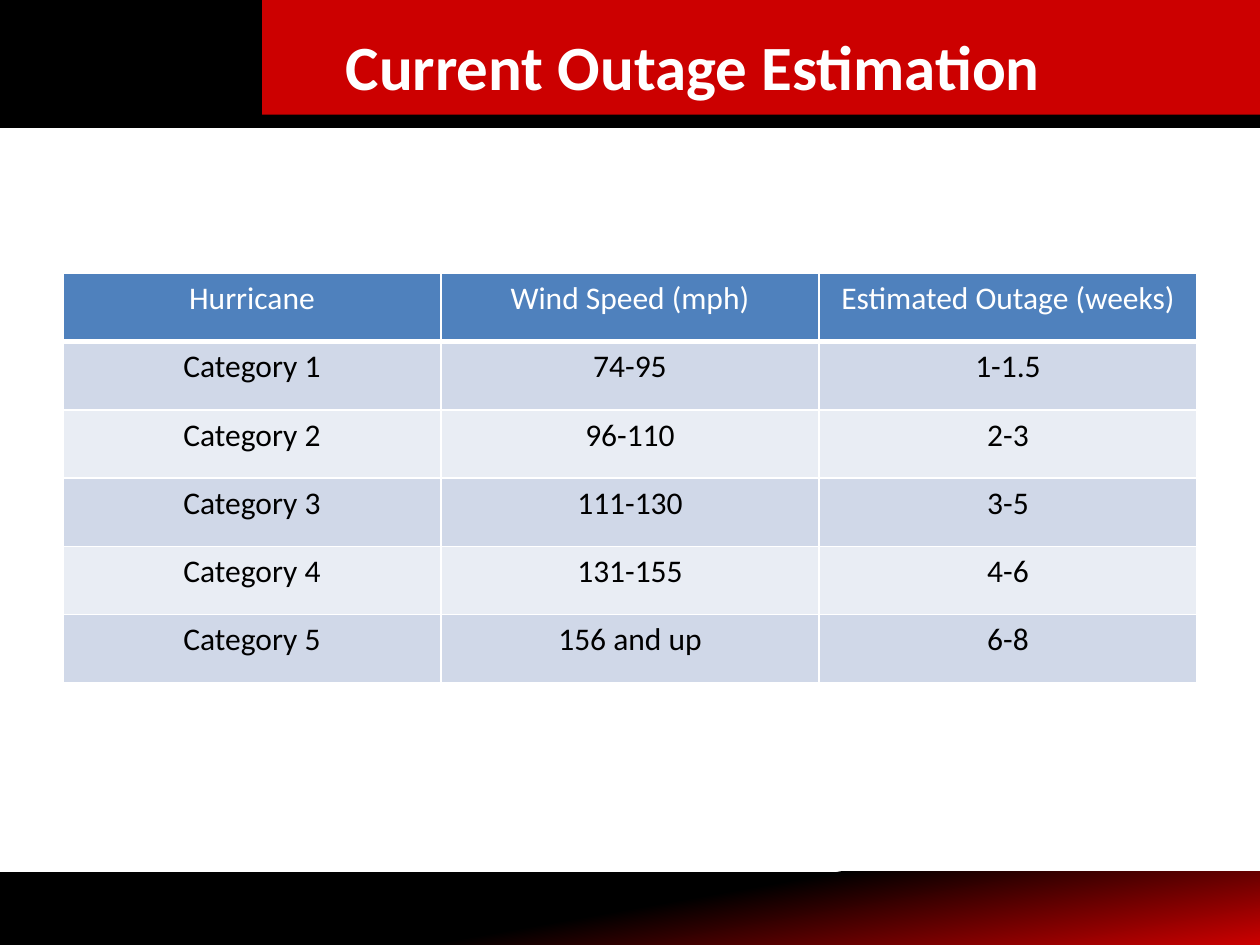
from copy import deepcopy

from lxml import etree
from pptx import Presentation
from pptx.dml.color import RGBColor
from pptx.enum.shapes import MSO_SHAPE as SHAPE
from pptx.enum.text import MSO_ANCHOR as ANCHOR, PP_ALIGN as ALIGN
from pptx.oxml.ns import qn
from pptx.util import Inches, Pt

BLACK, WHITE, RED = "000000", "FFFFFF", "CC0000"
HEADER, BANDS = "4F81BD", ("D0D8E8", "E9EDF4")
OUTAGES = [
    ("Hurricane", "Wind Speed (mph)", "Estimated Outage (weeks)"),
    ("Category 1", "74-95", "1-1.5"),
    ("Category 2", "96-110", "2-3"),
    ("Category 3", "111-130", "3-5"),
    ("Category 4", "131-155", "4-6"),
    ("Category 5", "156 and up", "6-8"),
]


def rgb(value):
    return RGBColor.from_string(value)


def set_borders(cell, color, bottom=1):
    tcPr = cell._tc.get_or_add_tcPr()
    for i, side in enumerate("LRTB"):
        width = bottom if side == "B" else 1
        ln = etree.Element(qn(f"a:ln{side}"), w=str(Pt(width)))
        fill = etree.SubElement(ln, qn("a:solidFill"))
        etree.SubElement(fill, qn("a:srgbClr"), val=color)
        tcPr.insert(i, ln)


class SlideBuilder:
    font = "Calibri"

    def __init__(self, prs):
        self.s = prs.slides.add_slide(prs.slide_layouts[5])

    def set_text(self, tf, text, size, color, bold=False):
        tf.text = text
        p = tf.paragraphs[0]
        p.alignment = ALIGN.CENTER
        for r in p.runs:
            r.font.name, r.font.size, r.font.bold = self.font, Pt(size), bold
            r.font.color.rgb = rgb(color)

    def bar(self, left, top, width, height, color, line=None):
        sp = self.s.shapes.add_shape(SHAPE.RECTANGLE, Inches(left), Inches(top),
                                     Inches(width), Inches(height))
        sp.shadow.inherit = False
        sp.fill.solid()
        sp.fill.fore_color.rgb = rgb(color)
        if line:
            sp.line.color.rgb = rgb(line)
            sp.line.width = Pt(2)
        else:
            sp.line.fill.background()
        return sp

    def gradient_bar(self, left, top, width, height, stops, angle):
        sp = self.bar(left, top, width, height, stops[0][1])
        sp.fill.gradient()
        sp.fill.gradient_angle = angle
        first = sp.element.xpath(".//a:gs")[0]
        for _ in stops[2:]:
            first.addnext(deepcopy(first))
        for stop, (position, color) in zip(sp.fill.gradient_stops, stops):
            stop.position = position
            stop.color.rgb = rgb(color)

    def title(self, text, left, top, width, height):
        sp = self.s.shapes.title
        sp.left, sp.top = Inches(left), Inches(top)
        sp.width, sp.height = Inches(width), Inches(height)
        sp.text_frame.vertical_anchor = ANCHOR.TOP
        self.set_text(sp.text_frame, text, 36, WHITE, bold=True)
        sp.element.getparent().append(sp.element)  # bring in front of the bars

    def table(self, rows, left, top, width, height):
        table = self.s.shapes.add_table(len(rows), len(rows[0]), Inches(left), Inches(top),
                                        Inches(width), Inches(height)).table
        for i, row in enumerate(rows):
            is_header = i == 0
            for j, text in enumerate(row):
                cell = table.cell(i, j)
                set_borders(cell, WHITE, bottom=3 if is_header else 1)
                cell.fill.solid()
                cell.fill.fore_color.rgb = rgb(HEADER if is_header else BANDS[(i - 1) % 2])
                self.set_text(cell.text_frame, text, 18, WHITE if is_header else BLACK)


def main():
    prs = Presentation()
    prs.slide_width, prs.slide_height = Inches(10), Inches(7.5)
    slide = SlideBuilder(prs)
    slide.gradient_bar(0, 6.92, 10, 0.58, [(0, BLACK), (0.5, BLACK), (1, RED)], angle=280)
    slide.bar(0, 0, 10, 1, BLACK, line=BLACK)
    slide.bar(2.08, 0, 7.92, 0.91, RED)
    slide.title("Current Outage Estimation", 1, 0.17, 9, 1.25)
    slide.table(OUTAGES, 0.5, 2.17, 9, 3.25)
    prs.save("out.pptx")


if __name__ == "__main__":
    main()
